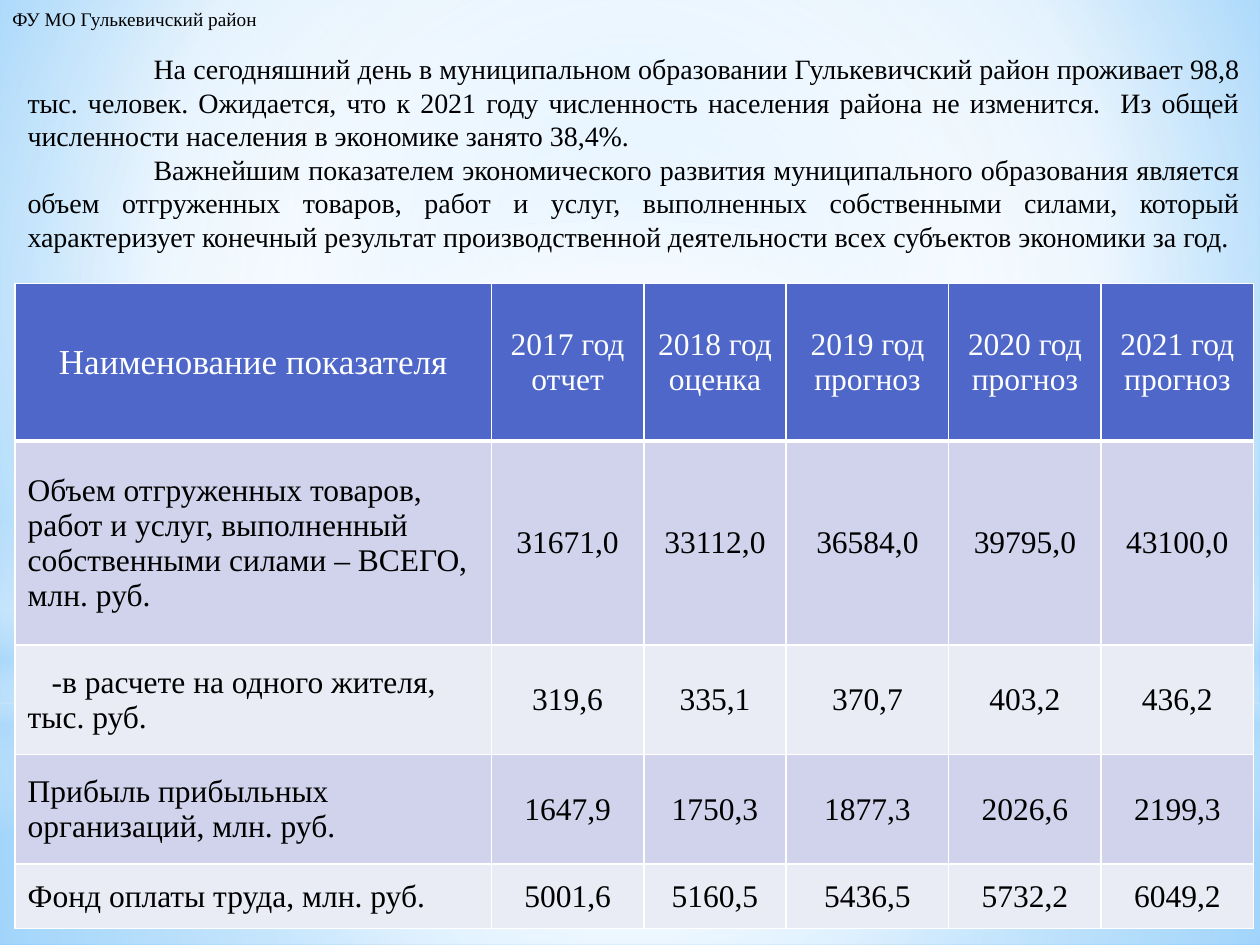
from lxml.etree import SubElement
from pptx import Presentation
from pptx.dml.color import RGBColor
from pptx.enum.shapes import MSO_SHAPE
from pptx.enum.text import MSO_ANCHOR, MSO_AUTO_SIZE, PP_ALIGN
from pptx.oxml.ns import qn
from pptx.util import Inches, Pt

THEME = {
    "font": "Times New Roman", "text": "000000", "white": "FFFFFF",
    "header": "4E67C8", "bands": ("D0D3EB", "E9EBF5"),
    "small": 11, "body": 16, "cell": 18, "title": 20,
}
LABEL = "ФУ МО Гулькевичский район"
INTRO = (
    "На сегодняшний день в муниципальном образовании Гулькевичский район проживает "
    "98,8 тыс. человек. Ожидается, что к 2021 году численность населения района не "
    "изменится.  Из общей численности населения в экономике занято 38,4%.",
    "Важнейшим показателем экономического развития муниципального образования является "
    "объем отгруженных товаров, работ и услуг, выполненных собственными силами, который "
    "характеризует конечный результат производственной деятельности всех субъектов "
    "экономики за год.",
)
ROWS = (
    ("Наименование показателя", "2017 год отчет", "2018 год оценка",
     "2019 год прогноз", "2020 год прогноз", "2021 год прогноз"),
    ("Объем отгруженных товаров, работ и услуг, выполненный собственными силами – ВСЕГО, "
     "млн. руб.", "31671,0", "33112,0", "36584,0", "39795,0", "43100,0"),
    ("-в расчете на одного жителя, тыс. руб.", "319,6", "335,1", "370,7", "403,2", "436,2"),
    ("Прибыль прибыльных организаций, млн. руб.",
     "1647,9", "1750,3", "1877,3", "2026,6", "2199,3"),
    ("Фонд оплаты труда, млн. руб.", "5001,6", "5160,5", "5436,5", "5732,2", "6049,2"),
)
COL_WIDTHS = (3.78, 1.21, 1.13, 1.29, 1.21, 1.21)
ROW_HEIGHTS = (1.25, 1.62, 0.87, 0.87, 0.51)

# Gradient stops: position %, colour, opacity %
BACKDROP = ((0, "9ED5FF", 100), (60, "FFFFFF", 100), (100, "5BB9FF", 100))
CENTRE = (50, 50, 50, 50)
LAYERS = (  # shape, box, stops, focus (None for a vertical gradient)
    (MSO_SHAPE.RECTANGLE, (0, 5.58, 10, 1.92),
     ((0, "FFFFFF", 91), (37, "FFFFFF", 76), (100, "B4DCFA", 79)), CENTRE),
    (MSO_SHAPE.RECTANGLE, (0, 0, 10, 5.58),
     ((0, "FFFFFF", 89), (48, "FFFFFF", 62), (100, "B4DCFA", 79)), CENTRE),
    (MSO_SHAPE.RECTANGLE, (0, 4.12, 10, 2.5),
     ((0, "FFFFFF", 0), (29, "FFFFFF", 30), (45, "B4DCFA", 40),
      (55, "FFFFFF", 26), (65, "B4DCFA", 60), (100, "FFFFFF", 0)), None),
    (MSO_SHAPE.OVAL, (0, 1.75, 10, 5.58),
     ((0, "FFFFFF", 100), (56, "FFFFFF", 0)), CENTRE),
)


def set_gradient(props, stops, focus=None):
    """Replace the solid fill in props with a gradient, circular if focus is given."""
    solid = props.find(qn("a:solidFill"))
    grad = SubElement(props, qn("a:gradFill"), rotWithShape="1")
    props.replace(solid, grad)
    gs_list = SubElement(grad, qn("a:gsLst"))
    for pos, color, opacity in stops:
        gs = SubElement(gs_list, qn("a:gs"), pos=str(pos * 1000))
        clr = SubElement(gs, qn("a:srgbClr"), val=color)
        if opacity < 100:
            SubElement(clr, qn("a:alpha"), val=str(opacity * 1000))
    if focus:
        radial = SubElement(grad, qn("a:path"), path="circle")
        SubElement(radial, qn("a:fillToRect"),
                   {side: str(v * 1000) for side, v in zip("ltrb", focus)})
    else:
        SubElement(grad, qn("a:lin"), ang="5400000", scaled="0")


def write(p, text, size, color=THEME["text"], align=PP_ALIGN.LEFT, indent=0):
    p.alignment = align
    if indent:
        pPr = p._p.get_or_add_pPr()
        pPr.set("marL", "0")
        pPr.set("indent", str(Inches(indent)))
    r = p.add_run()
    r.text = text
    r.font.name, r.font.size, r.font.bold = THEME["font"], Pt(size), False
    r.font.color.rgb = RGBColor.from_string(color)


def add_text(slide, box, paragraphs, wrap=True, **fmt):
    tf = slide.shapes.add_textbox(*map(Inches, box)).text_frame
    tf.word_wrap = wrap
    tf.auto_size = MSO_AUTO_SIZE.SHAPE_TO_FIT_TEXT
    for i, text in enumerate(paragraphs):
        write(tf.add_paragraph() if i else tf.paragraphs[0], text, **fmt)


def set_borders(cell, **widths):
    tcPr = cell._tc.get_or_add_tcPr()
    for i, side in enumerate("LRTB"):
        ln = tcPr.makeelement(qn(f"a:ln{side}"), w=str(Pt(widths.get(side, 1))))
        fill = SubElement(ln, qn("a:solidFill"))
        SubElement(fill, qn("a:srgbClr"), val=THEME["white"])
        tcPr.insert(i, ln)


def add_indicators(slide, left, top):
    table = slide.shapes.add_table(
        len(ROWS), len(COL_WIDTHS), Inches(left), Inches(top),
        Inches(sum(COL_WIDTHS)), Inches(sum(ROW_HEIGHTS))).table
    for col, width in zip(table.columns, COL_WIDTHS):
        col.width = Inches(width)
    for i, (row, height) in enumerate(zip(ROWS, ROW_HEIGHTS)):
        table.rows[i].height = Inches(height)
        header = i == 0
        fill = THEME["header"] if header else THEME["bands"][(i - 1) % 2]
        for j, text in enumerate(row):
            cell = table.cell(i, j)
            cell.fill.solid()
            cell.fill.fore_color.rgb = RGBColor.from_string(fill)
            cell.vertical_anchor = MSO_ANCHOR.MIDDLE
            write(cell.text_frame.paragraphs[0], text,
                  size=THEME["title" if header and j == 0 else "cell"],
                  color=THEME["white" if header else "text"],
                  align=PP_ALIGN.CENTER if header or j else PP_ALIGN.LEFT,
                  indent=0.19 if text.startswith("-") else 0)
            set_borders(cell, T=3 if i == 1 else 1, B=3 if header else 1)


def add_backdrop(slide):
    slide.background.fill.solid()
    set_gradient(slide._element.find(".//" + qn("p:bgPr")), BACKDROP, (20, 10, 20, 60))
    for kind, box, stops, focus in LAYERS:
        sp = slide.shapes.add_shape(kind, *map(Inches, box))
        sp.shadow.inherit = False
        sp.line.fill.background()
        sp.fill.solid()
        set_gradient(sp._element.spPr, stops, focus)


def main():
    prs = Presentation()
    prs.slide_width, prs.slide_height = Inches(10), Inches(7.5)
    slide = prs.slides.add_slide(prs.slide_layouts[6])
    add_backdrop(slide)
    add_text(slide, (0.12, 0.36, 9.82, 1.75), INTRO, size=THEME["body"],
             align=PP_ALIGN.JUSTIFY, indent=1)
    add_indicators(slide, 0.12, 2.25)
    add_text(slide, (0, 0.01, 2.18, 0.29), [LABEL], wrap=False, size=THEME["small"])
    prs.save("out.pptx")


if __name__ == "__main__":
    main()
